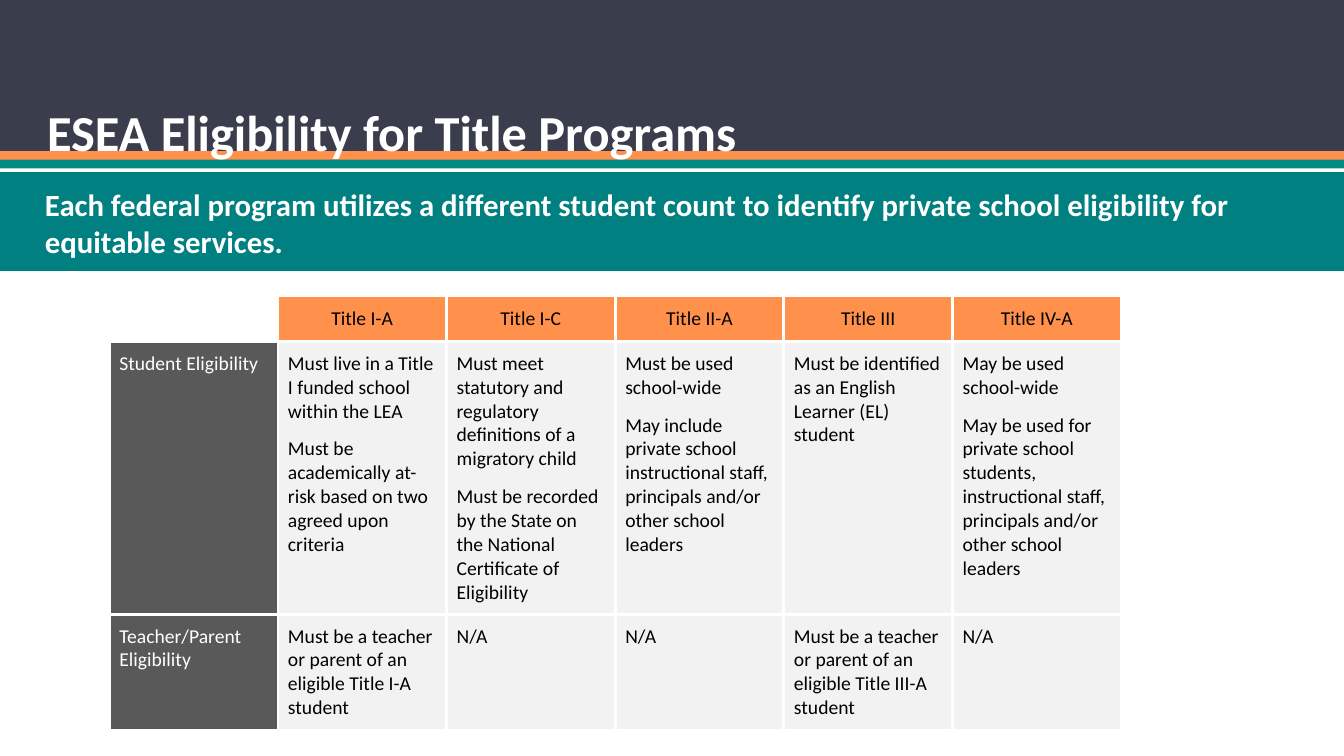
"""Build the slide on ESEA eligibility for title programs."""
from dataclasses import dataclass

from lxml.etree import SubElement
from pptx import Presentation
from pptx.dml.color import RGBColor
from pptx.enum.shapes import MSO_SHAPE as Preset
from pptx.enum.text import MSO_ANCHOR as Anchor, MSO_AUTO_SIZE as AutoSize, PP_ALIGN as Align
from pptx.oxml.ns import qn
from pptx.util import Pt

COLORS = {
    "navy": "3A3D4B", "orange": "FF914D", "green": "048A81", "teal": "008080",
    "white": "FFFFFF", "black": "000000", "dark gray": "595959", "light gray": "F2F2F2",
}
SLIDE_WIDTH, SLIDE_HEIGHT = 960, 540
FONT = "Calibri"
COLUMN_WIDTH = 120.5
ROW_HEIGHTS = (33, 170, 78.5)
BORDER_WIDTH = 2.25


@dataclass
class Band:
    top: float
    height: float
    color: str


@dataclass
class CellStyle:
    fill: str
    text: str
    anchor: Anchor = Anchor.TOP
    align: Align = Align.LEFT


BANDS = [
    Band(0, 108, "navy"),
    Band(108, 6.25, "orange"),
    Band(114, 6.25, "green"),
    Band(123, 70.5, "teal"),
]
HEADER = CellStyle("orange", "black", Anchor.MIDDLE, Align.CENTER)
ROW_LABEL = CellStyle("dark gray", "white")
BODY = CellStyle("light gray", "black")

TABLE_ROWS = [
    [[], ["Title I-A"], ["Title I-C"], ["Title II-A"], ["Title III"], ["Title IV-A"]],
    [
        ["Student Eligibility"],
        ["Must live in a Title I funded school within the LEA",
         "Must be academically at-risk based on two agreed upon criteria"],
        ["Must meet statutory and regulatory definitions of a migratory child",
         "Must be recorded by the State on the National Certificate of Eligibility"],
        ["Must be used school-wide",
         "May include private school instructional staff, principals and/or other school leaders"],
        ["Must be identified as an English Learner (EL) student"],
        ["May be used school-wide",
         "May be used for private school students, instructional staff, "
         "principals and/or other school leaders"],
    ],
    [
        ["Teacher/Parent Eligibility"],
        ["Must be a teacher or parent of an eligible Title I-A student"],
        ["N/A"],
        ["N/A"],
        ["Must be a teacher or parent of an eligible Title III-A student"],
        ["N/A"],
    ],
]


def rgb(name: str) -> RGBColor:
    """Return the named colour."""
    return RGBColor.from_string(COLORS[name])


def add_run(paragraph, text: str, size: float, color: str, bold: bool = False) -> None:
    """Add one formatted run to a paragraph."""
    run = paragraph.add_run()
    run.text = text
    run.font.name = FONT
    run.font.size = Pt(size)
    run.font.bold = bold
    run.font.color.rgb = rgb(color)


def set_margins(target, margin: float) -> None:
    """Give a text frame or a cell equal margins on all sides."""
    for side in ("left", "top", "right", "bottom"):
        setattr(target, f"margin_{side}", Pt(margin))


def prepare_frame(frame) -> None:
    """Wrap the text of a frame from its top, at a fixed size."""
    frame.word_wrap = True
    frame.auto_size = AutoSize.NONE
    frame.vertical_anchor = Anchor.TOP
    set_margins(frame, 9.6)


def add_band(slide, band: Band) -> None:
    """Draw a band across the whole slide."""
    shape = slide.shapes.add_shape(
        Preset.RECTANGLE, Pt(0), Pt(band.top), Pt(SLIDE_WIDTH), Pt(band.height))
    shape.shadow.inherit = False
    shape.fill.solid()
    shape.fill.fore_color.rgb = rgb(band.color)
    shape.line.fill.background()


def add_title(slide, text: str) -> None:
    """Fill the title placeholder and bring it in front of the bands."""
    title = slide.shapes.title
    title.left, title.top, title.width, title.height = Pt(24), Pt(45), Pt(894), Pt(60)
    prepare_frame(title.text_frame)
    paragraph = title.text_frame.paragraphs[0]
    paragraph.alignment = Align.LEFT
    paragraph.line_spacing = 1.4
    add_run(paragraph, text, 36, "white", bold=True)
    slide.shapes._spTree.append(title._element)


def add_statement(slide, text: str, band: Band) -> None:
    """Write the key statement on its band."""
    box = slide.shapes.add_textbox(Pt(0), Pt(band.top), Pt(948), Pt(band.height))
    prepare_frame(box.text_frame)
    paragraph = box.text_frame.paragraphs[0]
    properties = paragraph._p.get_or_add_pPr()
    properties.set("marL", str(Pt(22.5)))
    properties.set("indent", "0")
    add_run(paragraph, text, 22, "white", bold=True)


def add_borders(cell) -> None:
    """Put a white border on every side of a cell."""
    properties = cell._tc.get_or_add_tcPr()
    for index, side in enumerate(("lnL", "lnR", "lnT", "lnB")):
        line = properties.makeelement(qn(f"a:{side}"), {"w": str(Pt(BORDER_WIDTH))})
        fill = SubElement(line, qn("a:solidFill"))
        SubElement(fill, qn("a:srgbClr"), val=COLORS["white"])
        properties.insert(index, line)


def fill_cell(cell, texts: list[str], style: CellStyle) -> None:
    """Write the paragraphs of a cell in its style."""
    cell.fill.solid()
    cell.fill.fore_color.rgb = rgb(style.fill)
    cell.vertical_anchor = style.anchor
    set_margins(cell, 7.2)
    frame = cell.text_frame
    for index, text in enumerate(texts):
        paragraph = frame.add_paragraph() if index else frame.paragraphs[0]
        paragraph.alignment = style.align
        paragraph.space_before = Pt(10 if index else 0)
        is_last_body = style is BODY and index == len(texts) - 1
        paragraph.space_after = Pt(10 if is_last_body else 0)
        add_run(paragraph, text, 14, style.text)


def add_eligibility_table(slide) -> None:
    """Add the table of eligibility rules by program."""
    column_count = len(TABLE_ROWS[0])
    table = slide.shapes.add_table(
        len(TABLE_ROWS), column_count, Pt(78), Pt(211),
        Pt(COLUMN_WIDTH * column_count), Pt(sum(ROW_HEIGHTS))).table
    table.first_row = table.horz_banding = False
    for column in table.columns:
        column.width = Pt(COLUMN_WIDTH)
    for row_index, row in enumerate(TABLE_ROWS):
        table.rows[row_index].height = Pt(ROW_HEIGHTS[row_index])
        for column_index, texts in enumerate(row):
            cell = table.cell(row_index, column_index)
            if texts:
                style = HEADER if row_index == 0 else BODY if column_index else ROW_LABEL
                fill_cell(cell, texts, style)
            else:
                cell.fill.background()
            add_borders(cell)


def main() -> None:
    """Build and save the presentation."""
    presentation = Presentation()
    presentation.slide_width, presentation.slide_height = Pt(SLIDE_WIDTH), Pt(SLIDE_HEIGHT)
    slide = presentation.slides.add_slide(presentation.slide_layouts[5])
    for band in BANDS:
        add_band(slide, band)
    add_title(slide, "ESEA Eligibility for Title Programs")
    add_statement(
        slide,
        "Each federal program utilizes a different student count to identify "
        "private school eligibility for equitable services.",
        BANDS[-1])
    add_eligibility_table(slide)
    presentation.save("out.pptx")


if __name__ == "__main__":
    main()
